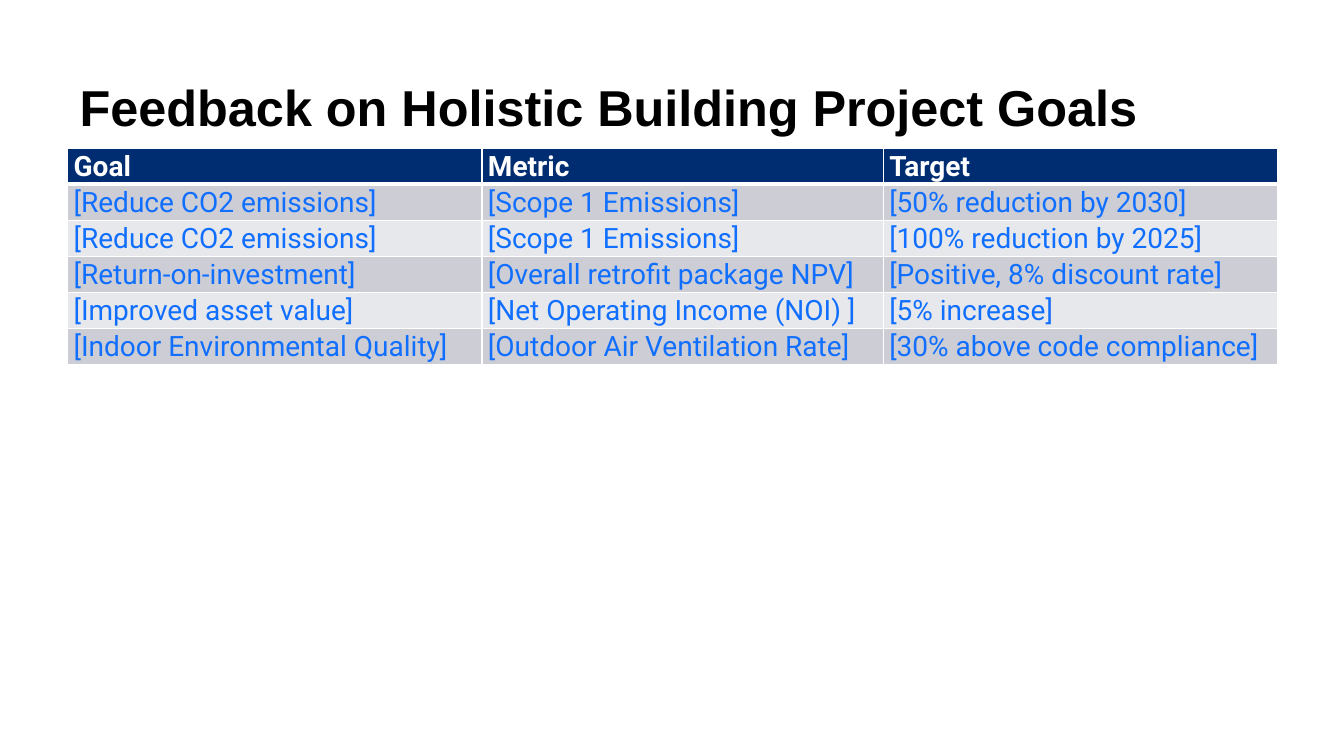
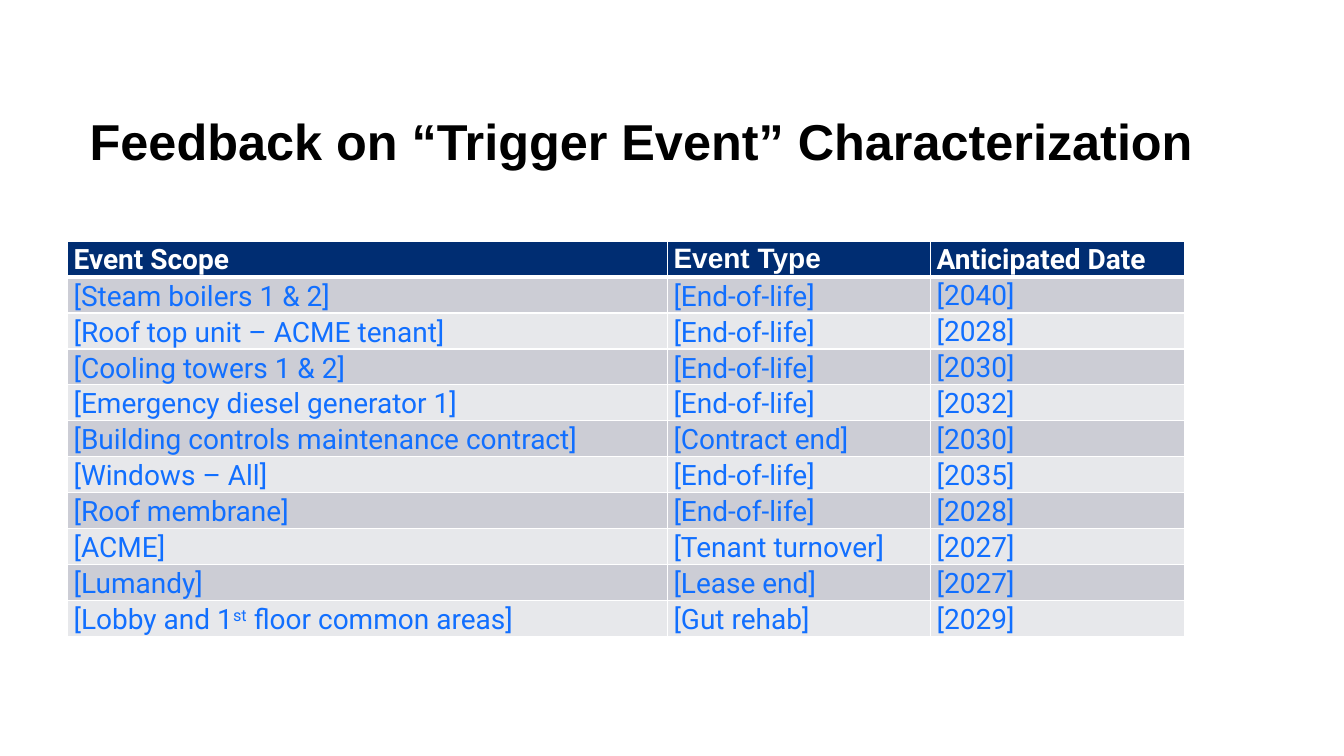
import dataclasses

import pptx
import pptx.dml.color
import pptx.enum.text
import pptx.oxml
import pptx.oxml.ns
import pptx.util

Inches = pptx.util.Inches
Pt = pptx.util.Pt
ANCHOR = pptx.enum.text.MSO_ANCHOR


@dataclasses.dataclass(frozen=True)
class Theme:
    title_color: str = "000000"
    header_fill: str = "002D72"
    header_color: str = "FFFFFF"
    body_color: str = "116FFF"
    band_fills: tuple = ("CCCDD5", "E7E8EB")
    border: str = "FFFFFF"
    title_font: str = "Arial"
    table_font: str = "Roboto"
    title_size: int = 36
    table_size: int = 20
    thin: int = 1
    thick: int = 3
    left: float = 0.67
    row_height: float = 0.35


class Deck:
    def __init__(self, theme):
        self.theme = theme
        self.prs = pptx.Presentation()
        self.prs.slide_width = Inches(13.33)
        self.prs.slide_height = Inches(7.5)
        self.s = None

    def slide(self):
        self.s = self.prs.slides.add_slide(self.prs.slide_layouts[6])

    def run(self, p, text, font, size, color, bold=False, raised=False):
        r = p.add_run()
        r.text = text
        r.font.name = font
        r.font.size = Pt(size)
        r.font.bold = bold
        r.font.color.rgb = pptx.dml.color.RGBColor.from_string(color)
        if raised:
            r.font._element.set("baseline", "30000")

    def title(self, text, top, height, inset):
        t = self.theme
        sp = self.s.shapes.add_textbox(Inches(t.left), Inches(top), Inches(12), Inches(height))
        tf = sp.text_frame
        tf.word_wrap = True
        tf.vertical_anchor = ANCHOR.MIDDLE
        tf.margin_left = Inches(inset + 0.12)
        tf.margin_right = Inches(inset)
        tf.margin_top = tf.margin_bottom = Inches(inset / 2)
        p = tf.paragraphs[0]
        p.space_before = p.space_after = Pt(6)
        self.run(p, text, t.title_font, t.title_size, t.title_color, True)

    def borders(self, cell, row):
        t = self.theme
        widths = {
            "L": t.thin,
            "R": t.thin,
            "T": t.thick if row == 1 else t.thin,
            "B": t.thick if row == 0 else t.thin,
        }
        tcPr = cell._tc.get_or_add_tcPr()
        for side, width in widths.items():
            tcPr.append(pptx.oxml.parse_xml(
                f'<a:ln{side} {pptx.oxml.ns.nsdecls("a")} w="{Pt(width)}">'
                f'<a:solidFill><a:srgbClr val="{t.border}"/></a:solidFill></a:ln{side}>'
            ))

    def cell(self, cell, row, text, font, anchor):
        t = self.theme
        header = row == 0
        fill = t.header_fill if header else t.band_fills[(row - 1) % 2]
        self.borders(cell, row)
        cell.fill.solid()
        cell.fill.fore_color.rgb = pptx.dml.color.RGBColor.from_string(fill)
        cell.margin_left = cell.margin_right = Inches(0.06)
        cell.margin_top = cell.margin_bottom = 0
        cell.vertical_anchor = anchor
        p = cell.text_frame.paragraphs[0]
        p.line_spacing = 1.07
        p.space_after = Pt(8)
        color = t.header_color if header else t.body_color
        for i, part in enumerate(text.split("^")):
            self.run(p, part, font, t.table_size, color, header, i % 2 == 1)

    def table(self, top, widths, rows, header_anchor, anchors, header_fonts=None):
        t = self.theme
        fonts = header_fonts or [t.table_font] * len(widths)
        tbl = self.s.shapes.add_table(
            len(rows), len(widths), Inches(t.left), Inches(top),
            Inches(sum(widths)), Inches(t.row_height * len(rows)),
        ).table
        for col, width in zip(tbl.columns, widths):
            col.width = Inches(width)
        for i, row in enumerate(rows):
            tbl.rows[i].height = Inches(t.row_height)
            for j, text in enumerate(row):
                font = fonts[j] if i == 0 else t.table_font
                anchor = header_anchor if i == 0 else anchors[j]
                self.cell(tbl.cell(i, j), i, text, font, anchor)


GOALS = [
    ("Goal", "Metric", "Target"),
    ("[Reduce CO2 emissions]", "[Scope 1 Emissions]", "[50% reduction by 2030]"),
    ("[Reduce CO2 emissions]", "[Scope 1 Emissions]", "[100% reduction by 2025]"),
    ("[Return-on-investment]", "[Overall retrofit package NPV]", "[Positive, 8% discount rate]"),
    ("[Improved asset value]", "[Net Operating Income (NOI) ]", "[5% increase]"),
    ("[Indoor Environmental Quality]", "[Outdoor Air Ventilation Rate]", "[30% above code compliance]"),
]

EVENTS = [
    ("Event Scope", "Event Type", "Anticipated Date"),
    ("[Steam boilers 1 & 2]", "[End-of-life]", "[2040]"),
    ("[Roof top unit – ACME tenant]", "[End-of-life]", "[2028]"),
    ("[Cooling towers 1 & 2]", "[End-of-life]", "[2030]"),
    ("[Emergency diesel generator 1]", "[End-of-life]", "[2032]"),
    ("[Building controls maintenance contract]", "[Contract end]", "[2030]"),
    ("[Windows – All]", "[End-of-life]", "[2035]"),
    ("[Roof membrane]", "[End-of-life]", "[2028]"),
    ("[ACME]", "[Tenant turnover]", "[2027]"),
    ("[Lumandy]", "[Lease end]", "[2027]"),
    ("[Lobby and 1^st^ floor common areas]", "[Gut rehab]", "[2029]"),
]


def main():
    theme = Theme()
    deck = Deck(theme)

    deck.slide()
    deck.title("Feedback on Holistic Building Project Goals", 0.43, 1.25, 0)
    deck.table(1.47, [4.11, 3.98, 3.91], GOALS, ANCHOR.MIDDLE, [ANCHOR.MIDDLE] * 3)

    deck.slide()
    deck.title("Feedback on “Trigger Event” Characterization", 0.31, 2.16, 0.1)
    deck.table(
        2.39, [5.95, 2.61, 2.52], EVENTS, ANCHOR.TOP,
        [ANCHOR.BOTTOM, ANCHOR.BOTTOM, ANCHOR.TOP],
        [theme.table_font, theme.title_font, theme.table_font],
    )

    deck.prs.save("out.pptx")


if __name__ == "__main__":
    main()
